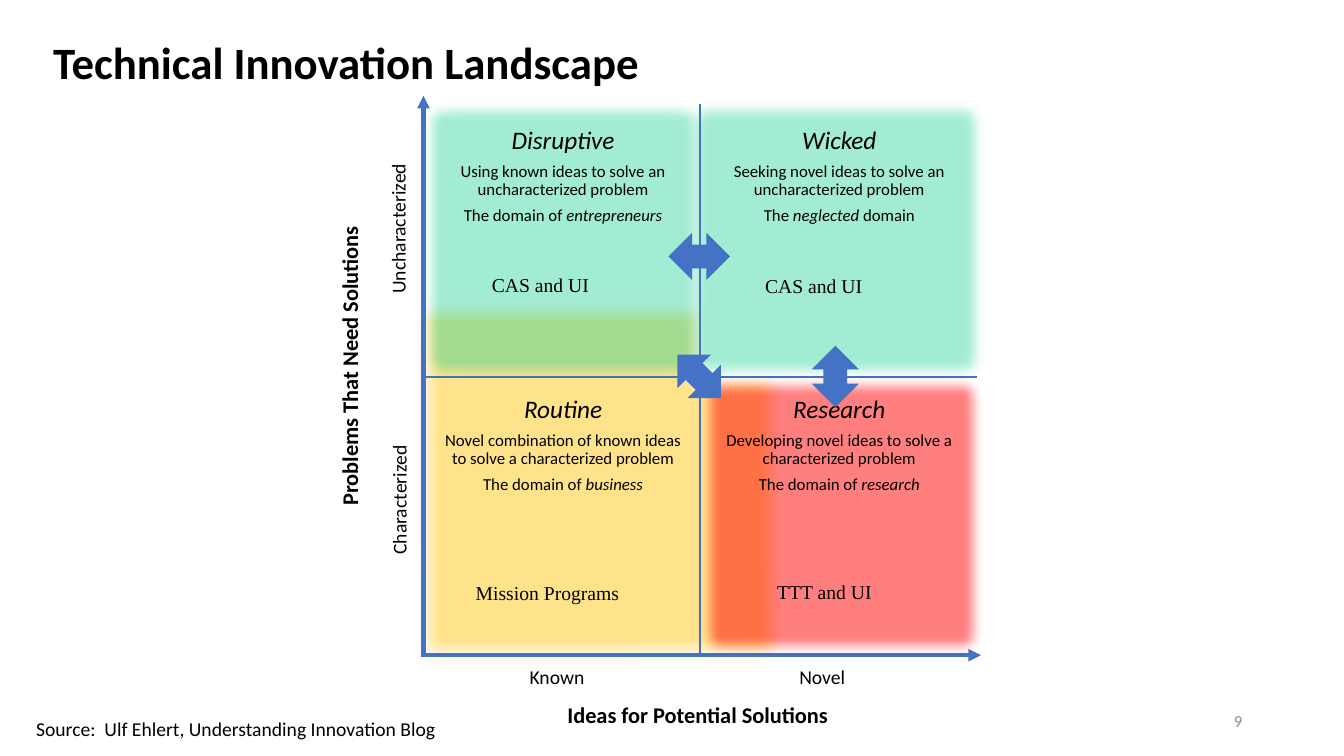
from lxml.etree import SubElement
from pptx import Presentation
from pptx.dml.color import RGBColor
from pptx.enum.shapes import MSO_CONNECTOR, MSO_SHAPE
from pptx.enum.text import MSO_ANCHOR, PP_ALIGN
from pptx.oxml.ns import qn
from pptx.util import Emu, Pt

PX = 9144  # EMU per px, 100 px to the inch
SLIDE_SIZE = (1333, 750)
SOFT_EDGE = 127000
COLORS = {"text": "000000", "number": "8C8C8C", "axis": "4472C4",
          "routine": "FFD966", "open": "19D194", "research": "FF0000"}
SERIF = "Times New Roman"
LEFT, CENTER, RIGHT = PP_ALIGN.LEFT, PP_ALIGN.CENTER, PP_ALIGN.RIGHT
TOP, MIDDLE = MSO_ANCHOR.TOP, MSO_ANCHOR.MIDDLE

# text, (left, top, width, height), settings
LABELS = [
    ("Technical Innovation Landscape", (43, 26, 1150, 70),
     {"size": 32, "bold": True, "anchor": MIDDLE}),
    ("9", (942, 695, 300, 40),
     {"size": 12, "color": "number", "align": RIGHT, "anchor": MIDDLE}),
    ("Source:  Ulf Ehlert, Understanding Innovation Blog", (26, 706, 420, 34), {"wrap": False}),
    ("Problems That Need Solutions", (161, 341, 378, 44),
     {"size": 16, "bold": True, "align": CENTER, "rotation": 270}),
    ("Ideas for Potential Solutions", (490, 691, 404, 44),
     {"size": 16, "bold": True, "align": CENTER}),
    ("Known", (490, 655, 125, 40), {"align": CENTER}),
    ("Novel", (753, 655, 125, 40), {"align": CENTER}),
    ("Characterized", (315, 476, 168, 40), {"align": CENTER, "rotation": 270}),
    ("Uncharacterized", (297, 207, 202, 40), {"align": CENTER, "rotation": 270}),
    ("Mission Programs", (462, 571, 204, 40), {"font": SERIF}),
    ("CAS and UI", (478, 266, 176, 34), {"font": SERIF}),
    ("CAS and UI", (749, 267, 159, 34), {"font": SERIF}),
    ("TTT and UI", (761, 570, 115, 34), {"font": SERIF, "wrap": False}),
]

# heading, summary, domain line as (text, italic) runs; rows run top to bottom
QUADRANTS = [
    [("Disruptive", "Using known ideas to solve an uncharacterized problem",
      [("The domain of ", False), ("entrepreneurs", True)]),
     ("Wicked", "Seeking novel ideas to solve an uncharacterized problem",
      [("The ", False), ("neglected", True), (" domain", False)])],
    [("Routine", "Novel combination of known ideas to solve a characterized problem",
      [("The domain of ", False), ("business", True)]),
     ("Research", "Developing novel ideas to solve a characterized problem",
      [("The domain of ", False), ("research", True)])],
]
QUADRANT_ORIGIN, QUADRANT_STEP, QUADRANT_SIZE = (427, 118), (274, 267), (263, 140)

ROUTINE_OUTLINE = [(412, 658), (411, 297), (702, 297), (702, 368), (776, 368), (778, 657)]
WICKED_AREA = (674, 92, 310, 292)
DISRUPTIVE_AREA = (411, 93, 295, 292)
RESEARCH_AREA = (687, 366, 295, 292)

# from, to, width, arrowhead
AXES = [
    ((420, 651), (420, 95), 3, True),
    ((418, 650), (973, 650), 3, True),
    ((422, 374), (969, 374), 1.5, False),
    ((694, 103), (694, 650), 1.5, False),
]
ARROW_SIZE = (47, 61)
ARROWS = [((805, 343), 0), ((670, 224), 90), ((670, 343), 315)]  # corner, rotation


def px(*lengths):
    return [Emu(length * PX) for length in lengths]


def rgb(name):
    return RGBColor.from_string(COLORS[name])


def add_run(paragraph, text, color="text", **font):
    run = paragraph.add_run()
    run.text = text
    run.font.color.rgb = rgb(color)
    for key, value in {"name": "Calibri", **font}.items():
        setattr(run.font, key, value)


def add_box(slide, area, wrap=True, anchor=TOP, rotation=0):
    box = slide.shapes.add_textbox(*px(*area))
    box.rotation = rotation
    box.text_frame.word_wrap = wrap
    box.text_frame.vertical_anchor = anchor
    return box.text_frame


def add_label(slide, text, area, size=14, bold=False, font="Calibri", color="text",
              align=LEFT, **frame):
    paragraph = add_box(slide, area, **frame).paragraphs[0]
    paragraph.alignment = align
    add_run(paragraph, text, color, name=font, size=Pt(size), bold=bold)


def add_quadrant(slide, area, heading, summary, domain):
    frame = add_box(slide, area)
    title = frame.paragraphs[0]
    title.alignment = CENTER
    add_run(title, heading, size=Pt(18), italic=True)
    for runs in ([(summary, False)], domain):
        paragraph = frame.add_paragraph()
        for key, value in {"alignment": CENTER, "line_spacing": 0.9,
                           "space_before": Pt(6)}.items():
            setattr(paragraph, key, value)
        for text, italic in runs:
            add_run(paragraph, text, size=Pt(12), italic=italic)


def paint(shape, color):
    shape.shadow.inherit = False
    shape.fill.solid()
    shape.fill.fore_color.rgb = rgb(color)
    shape.line.fill.background()


def soften(shape, color, opacity):
    """Fill with a translucent colour that fades out at the edges."""
    paint(shape, color)
    properties = shape._element.spPr
    fill_color = properties.find(qn("a:solidFill")).find(qn("a:srgbClr"))
    SubElement(fill_color, qn("a:alpha"), val=str(opacity * 1000))
    SubElement(properties.find(qn("a:effectLst")), qn("a:softEdge"), rad=str(SOFT_EDGE))


def add_area(slide, area, color, opacity):
    soften(slide.shapes.add_shape(MSO_SHAPE.RECTANGLE, *px(*area)), color, opacity)


def add_axis(slide, start, end, width, arrowhead):
    axis = slide.shapes.add_connector(MSO_CONNECTOR.STRAIGHT, *px(*start, *end))
    axis.line.color.rgb = rgb("axis")
    axis.line.width = Pt(width)
    if arrowhead:
        SubElement(axis.line._get_or_add_ln(), qn("a:tailEnd"), type="triangle")
    SubElement(axis._element.spPr, qn("a:effectLst"))


def main():
    deck = Presentation()
    deck.slide_width, deck.slide_height = px(*SLIDE_SIZE)
    slide = deck.slides.add_slide(deck.slide_layouts[6])

    builder = slide.shapes.build_freeform(*ROUTINE_OUTLINE[0], scale=PX)
    builder.add_line_segments(ROUTINE_OUTLINE[1:], close=True)
    soften(builder.convert_to_shape(), "routine", 75)
    add_area(slide, WICKED_AREA, "open", 40)
    for axis in AXES:
        add_axis(slide, *axis)
    add_area(slide, DISRUPTIVE_AREA, "open", 40)
    add_area(slide, RESEARCH_AREA, "research", 50)

    for text, area, settings in LABELS:
        add_label(slide, text, area, **settings)
    for row, quadrants in enumerate(QUADRANTS):
        for column, quadrant in enumerate(quadrants):
            left = QUADRANT_ORIGIN[0] + column * QUADRANT_STEP[0]
            top = QUADRANT_ORIGIN[1] + row * QUADRANT_STEP[1]
            add_quadrant(slide, (left, top, *QUADRANT_SIZE), *quadrant)
    for corner, rotation in ARROWS:
        arrow = slide.shapes.add_shape(MSO_SHAPE.UP_DOWN_ARROW, *px(*corner, *ARROW_SIZE))
        arrow.rotation = rotation
        paint(arrow, "axis")

    deck.save("out.pptx")


if __name__ == "__main__":
    main()
